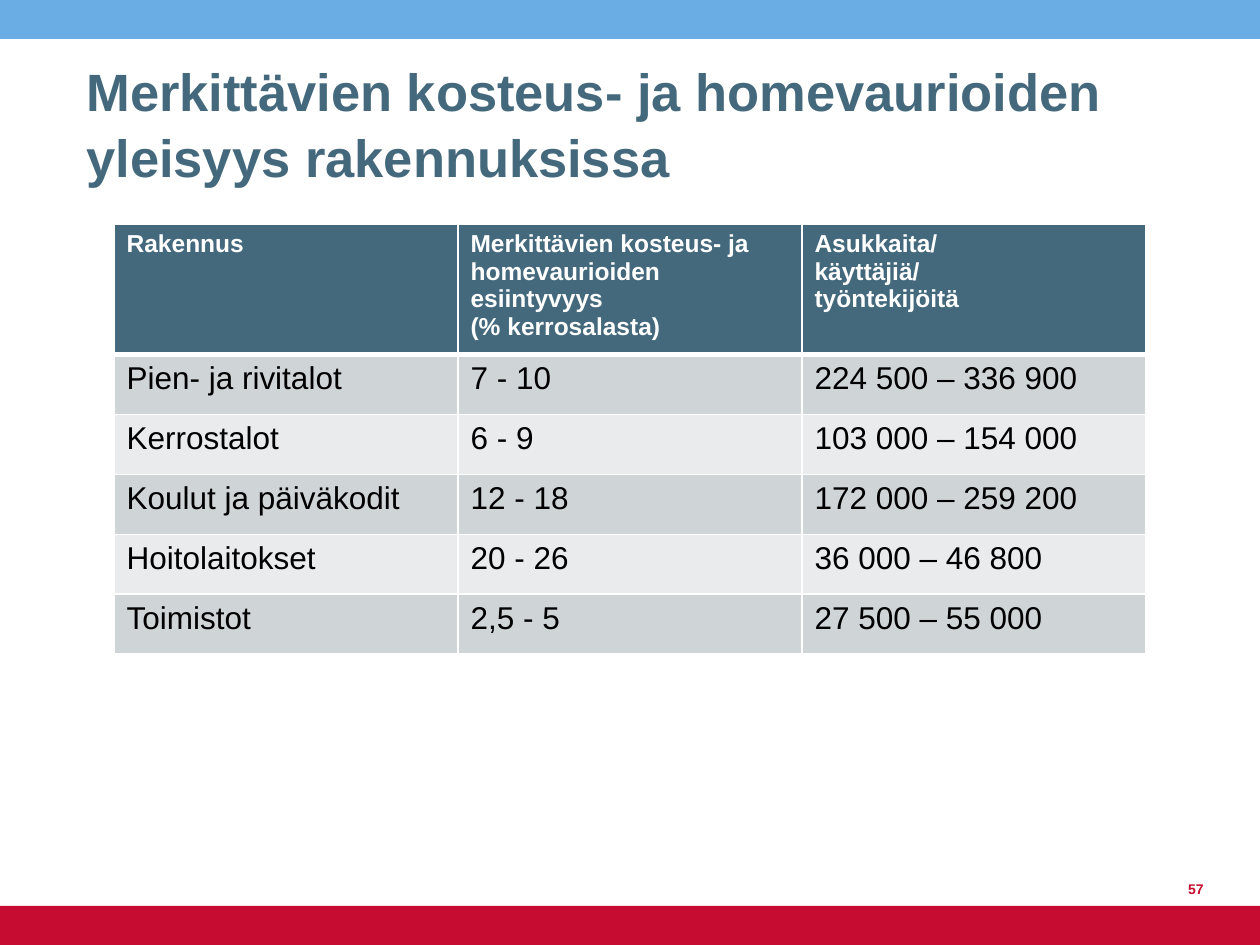
import pptx
import pptx.dml.color
import pptx.enum.shapes
import pptx.enum.text
import pptx.oxml
import pptx.oxml.ns
import pptx.util

HUES = {
    "sky": "6AADE4", "red": "C60C30", "slate": "44697D", "white": "FFFFFF",
    "black": "000000", "dark": "CFD4D7", "light": "E9EBEC",
}
TITLE = "Merkittävien kosteus- ja homevaurioiden yleisyys rakennuksissa"
PAGE = "57"
ROWS = [
    ("Rakennus",
     "Merkittävien kosteus- ja homevaurioiden esiintyvyys\n(% kerrosalasta)",
     "Asukkaita/\nkäyttäjiä/\ntyöntekijöitä"),
    ("Pien- ja rivitalot", "7 - 10", "224 500 – 336 900"),
    ("Kerrostalot", "6 - 9", "103 000 – 154 000"),
    ("Koulut ja päiväkodit", "12 - 18", "172 000 – 259 200"),
    ("Hoitolaitokset", "20 - 26", "36 000 – 46 800"),
    ("Toimistot", "2,5 - 5", "27 500 – 55 000"),
]
BANDS = [(0, "sky"), (906, "red")]
WIDE, HIGH, BAND = 1260, 945, 39
LEFT, TOP, COL, HEAD, ROW = 114, 224, 344, 129, 60


def px(n):
    return round(n * 914400 / 126)


def rgb(hue):
    return pptx.dml.color.RGBColor.from_string(HUES[hue])


def write(frame, text, size, hue, bold, right=False, gap=None):
    frame.text = text
    for para in frame.paragraphs:
        font = para.font
        font.name = "Arial"
        font.size = pptx.util.Pt(size)
        font.bold = bold
        font.color.rgb = rgb(hue)
        if right:
            para.alignment = pptx.enum.text.PP_ALIGN.RIGHT
        if gap:
            para.line_spacing = gap


def label(slide, spot, *args, **opts):
    frame = slide.shapes.add_textbox(*map(px, spot)).text_frame
    frame.word_wrap = True
    frame.vertical_anchor = pptx.enum.text.MSO_ANCHOR.BOTTOM
    write(frame, *args, **opts)


def edge(cell, widths):
    props = cell._tc.get_or_add_tcPr()
    for i, (side, width) in enumerate(widths.items()):
        line = pptx.oxml.parse_xml(
            f'<a:ln{side} {pptx.oxml.ns.nsdecls("a")} w="{pptx.util.Pt(width)}">'
            f'<a:solidFill><a:srgbClr val="{HUES["white"]}"/></a:solidFill>'
            f'</a:ln{side}>')
        props.insert(i, line)


def grid(slide):
    count, cols = len(ROWS), len(ROWS[0])
    spot = (LEFT, TOP, COL * cols, HEAD + ROW * (count - 1))
    table = slide.shapes.add_table(count, cols, *map(px, spot)).table
    for col in table.columns:
        col.width = px(COL)
    for r, texts in enumerate(ROWS):
        head = r == 0
        table.rows[r].height = px(HEAD if head else ROW)
        fill = "slate" if head else ("light", "dark")[r % 2]
        for c, text in enumerate(texts):
            cell = table.cell(r, c)
            cell.fill.solid()
            cell.fill.fore_color.rgb = rgb(fill)
            write(cell.text_frame, text, 14 if head else 18,
                  "white" if head else "black", head)
            edge(cell, {"L": 1, "R": 1, "T": 3 if r == 1 else 1,
                        "B": 3 if head else 1})


def main():
    deck = pptx.Presentation()
    deck.slide_width, deck.slide_height = px(WIDE), px(HIGH)
    slide = deck.slides.add_slide(deck.slide_layouts[6])
    for top, hue in BANDS:
        bar = slide.shapes.add_shape(
            pptx.enum.shapes.MSO_SHAPE.RECTANGLE, 0, px(top), px(WIDE), px(BAND))
        bar.shadow.inherit = False
        bar.fill.solid()
        bar.fill.fore_color.rgb = rgb(hue)
        bar.line.fill.background()
    label(slide, (74, 45, 1121, 149), TITLE, 30, "slate", True, gap=1.05)
    grid(slide)
    label(slide, (1147, 854, 69, 50), PAGE, 8, "red", True, right=True)
    deck.save("out.pptx")


if __name__ == "__main__":
    main()
